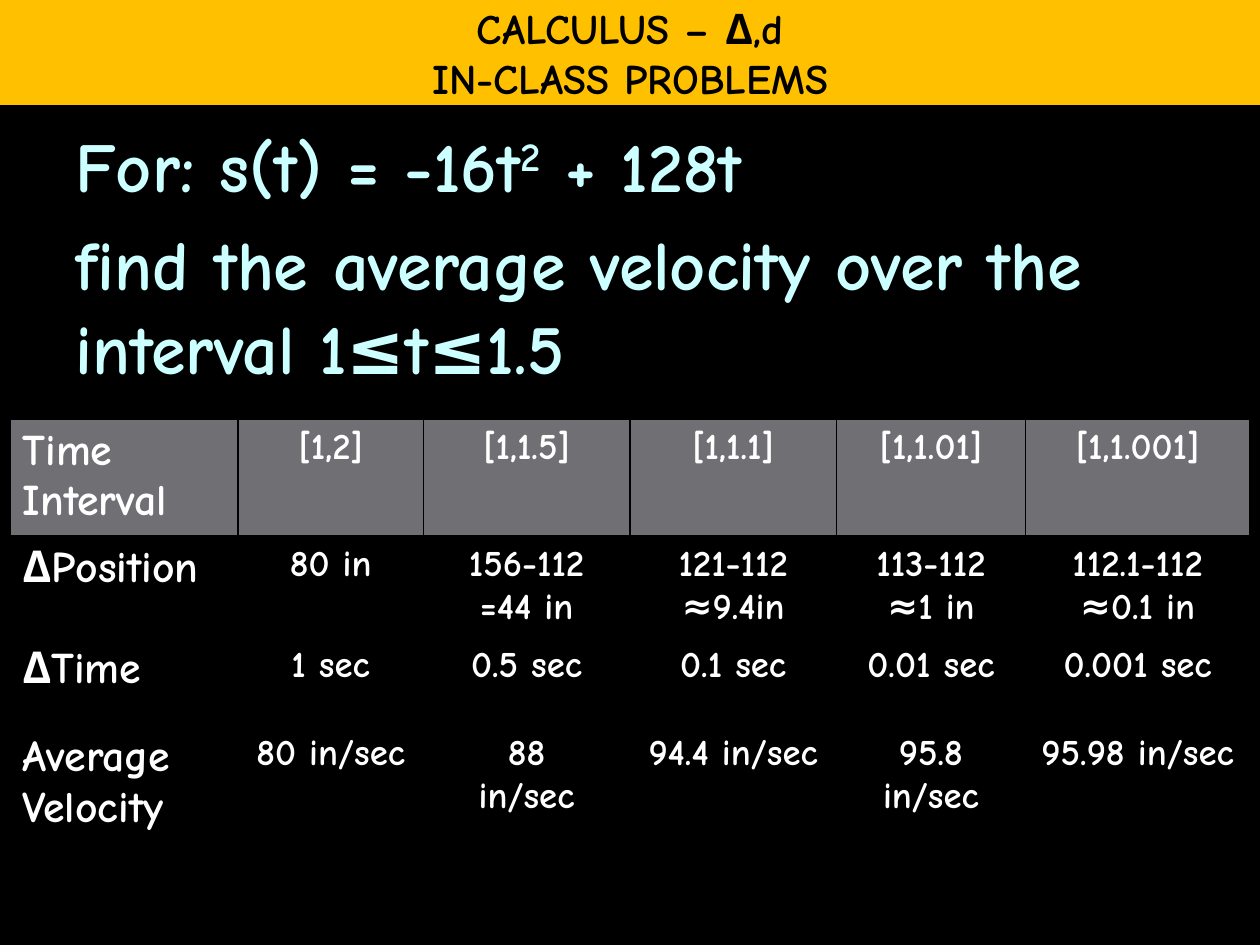
from lxml.etree import SubElement
from pptx import Presentation
from pptx.dml.color import RGBColor as Color
from pptx.enum.text import MSO_ANCHOR as Anchor, MSO_AUTO_SIZE as AutoSize, PP_ALIGN as Align
from pptx.oxml.ns import qn
from pptx.util import Inches, Pt

THEME = {
    "font": "Comic Neue",
    "black": Color.from_string("000000"),
    "white": Color.from_string("FFFFFF"),
    "banner": Color.from_string("FFC000"),
    "header": Color.from_string("6F6F74"),
    "problem": Color.from_string("CCFFFF"),
    "banner_size": Pt(24),
    "problem_size": Pt(40),
    "label_size": Pt(25),
    "value_size": Pt(21),
}


def format_text(text_frame, size, color, **paragraph_format):
    for paragraph in text_frame.paragraphs:
        for name, value in paragraph_format.items():
            setattr(paragraph, name, value)
        for run in paragraph.runs:
            font_format = {"name": THEME["font"], "size": size, "bold": True}
            for name, value in font_format.items():
                setattr(run.font, name, value)
            run.font.color.rgb = color


def add_borders(cell, bottom_width):
    """Draw black lines on all four sides; call before the cell is filled."""
    properties = cell._tc.get_or_add_tcPr()
    widths = {"a:lnL": Pt(1), "a:lnR": Pt(1), "a:lnT": Pt(1), "a:lnB": bottom_width}
    for tag, width in widths.items():
        line = SubElement(properties, qn(tag), w=str(width))
        fill = SubElement(line, qn("a:solidFill"))
        SubElement(fill, qn("a:srgbClr"), val=str(THEME["black"]))


presentation = Presentation()
presentation.slide_width, presentation.slide_height = Inches(10), Inches(7.5)
width, height = presentation.slide_width, presentation.slide_height
slide = presentation.slides.add_slide(presentation.slide_layouts[5])
slide.background.fill.solid()
slide.background.fill.fore_color.rgb = THEME["black"]

# Banner title
banner = slide.shapes.title
banner.left, banner.top, banner.width, banner.height = 0, 0, width, height // 9
banner.fill.solid()
banner.fill.fore_color.rgb = THEME["banner"]
banner_text = banner.text_frame
banner_text.text = "CALCULUS – Δ,d\nIN-CLASS PROBLEMS"
banner_format = {"auto_size": AutoSize.NONE, "word_wrap": False, "vertical_anchor": Anchor.MIDDLE}
for name, value in banner_format.items():
    setattr(banner_text, name, value)
format_text(banner_text, THEME["banner_size"], THEME["black"], alignment=Align.CENTER)

# Problem statement
problem = slide.shapes.add_textbox(width // 20, Inches(0.92), width * 9 // 10, height * 3 // 10)
problem_text = problem.text_frame
problem_text.word_wrap = True
formula = problem_text.paragraphs[0]
for part in ("For: s(t) = -16t", "2", " + 128t"):
    formula.add_run().text = part
question = problem_text.add_paragraph()
question.text = "find the average velocity over the interval 1≤t≤1.5"
format_text(problem_text, THEME["problem_size"], THEME["problem"],
            space_before=THEME["problem_size"] // 5)
formula.runs[1].font._element.set("baseline", "30000")

# Velocity table
ROWS = [
    ["Time Interval", "[1,2]", "[1,1.5]", "[1,1.1]", "[1,1.01]", "[1,1.001]"],
    ["ΔPosition", "80 in", "156-112\n=44 in", "121-112\n≈9.4in", "113-112\n≈1 in",
     "112.1-112\n≈0.1 in"],
    ["ΔTime", "1 sec", "0.5 sec", "0.1 sec", "0.01 sec", "0.001 sec"],
    ["Average Velocity", "80 in/sec", "88\nin/sec", "94.4 in/sec", "95.8\nin/sec",
     "95.98 in/sec"],
]
COLUMN_WIDTHS = [1.81, 1.47, 1.64, 1.64, 1.5, 1.78]
ROW_HEIGHT = Inches(0.7)

table_width = Inches(sum(COLUMN_WIDTHS))
table = slide.shapes.add_table(
    len(ROWS), len(COLUMN_WIDTHS), (width - table_width) // 2, Inches(3.33),
    table_width, ROW_HEIGHT * len(ROWS)).table
for column, column_width in zip(table.columns, COLUMN_WIDTHS):
    column.width = Inches(column_width)

for row_index, row in enumerate(ROWS):
    is_header = row_index == 0
    for column_index, text in enumerate(row):
        is_label = column_index == 0
        cell = table.cell(row_index, column_index)
        cell.text = text
        format_text(cell.text_frame, THEME["label_size" if is_label else "value_size"],
                    THEME["white"], alignment=Align.LEFT if is_label else Align.CENTER)
        add_borders(cell, Pt(3) if is_header else Pt(1))
        cell.fill.solid()
        cell.fill.fore_color.rgb = THEME["header" if is_header else "black"]

presentation.save("out.pptx")
